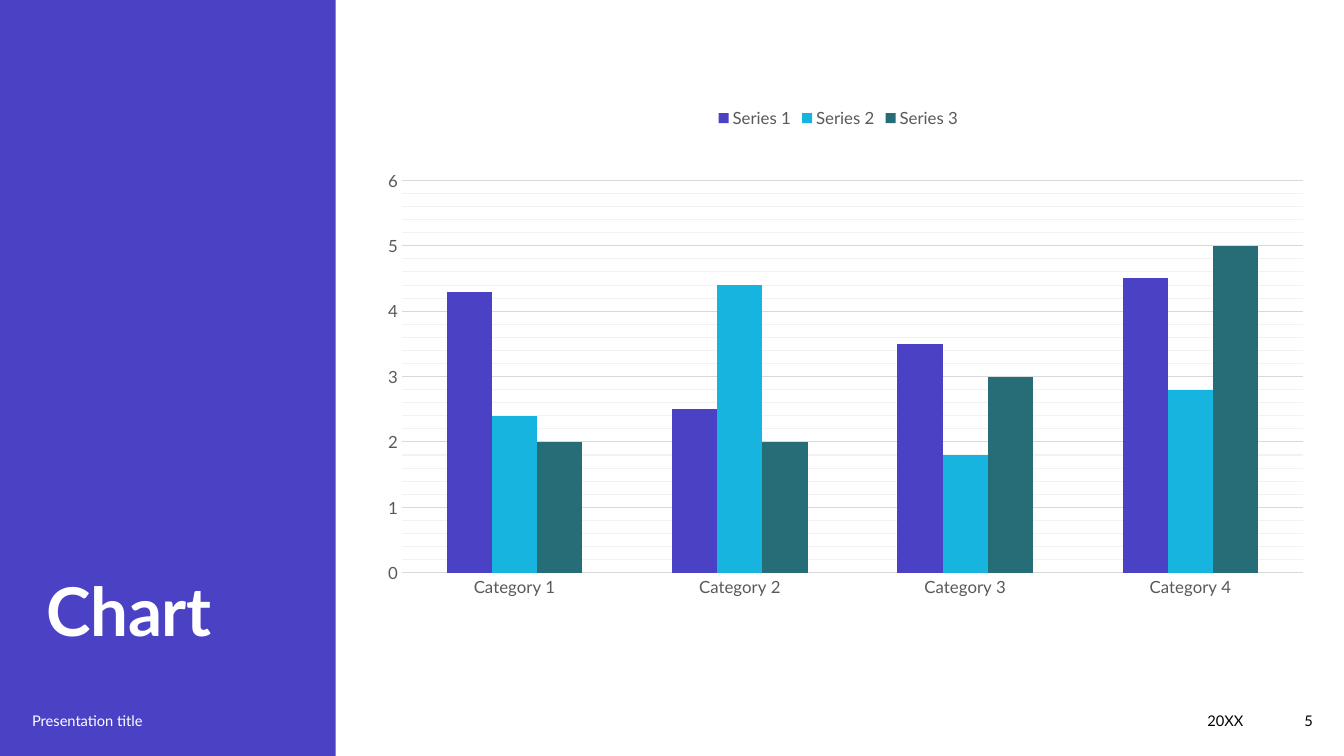
from copy import deepcopy
from lxml.etree import SubElement
from pptx import Presentation
from pptx.chart.data import CategoryChartData
from pptx.dml.color import RGBColor
from pptx.enum.chart import XL_CHART_TYPE as ChartType, XL_LEGEND_POSITION as LegendPosition
from pptx.enum.chart import XL_TICK_MARK as TickMark
from pptx.enum.shapes import MSO_SHAPE as Shape
from pptx.enum.text import MSO_ANCHOR as Anchor, MSO_AUTO_SIZE as AutoSize, PP_ALIGN as Align
from pptx.oxml.ns import qn
from pptx.util import Emu, Pt

EMU_PER_PX = 9144
TITLE_ONLY = 5
CATEGORIES = ["Category 1", "Category 2", "Category 3", "Category 4"]
SERIES = [
    ("Series 1", "4A41C5", (4.3, 2.5, 3.5, 4.5)),
    ("Series 2", "17B4DF", (2.4, 4.4, 1.8, 2.8)),
    ("Series 3", "276D77", (2, 2, 3, 5)),
]
PLOT_AREA = {"x": 0.04, "y": 0.16, "w": 0.95, "h": 0.75}


def px(*lengths):
    return [Emu(length * EMU_PER_PX) for length in lengths]


def rgb(value):
    return RGBColor.from_string(value)


class SlideBuilder:
    """Holds the style and the current slide, and adds each kind of element."""

    font_name = "Lato"
    accent, white, black = "4A41C5", "FFFFFF", "000000"
    label, grid, minor_grid = "595959", "D9D9D9", "F2F2F2"

    def __init__(self, slide):
        self.slide = slide
        self.shapes = slide.shapes

    def style_font(self, font, size, color, bold=False):
        font.name = self.font_name
        font.size = Pt(size)
        font.bold = bold
        font.color.rgb = rgb(color)

    def style_line(self, line, color):
        line.color.rgb = rgb(color)
        line.width = Pt(0.75)

    def fill_text(self, shape, text, size, color, anchor, align=Align.LEFT, bold=False):
        frame = shape.text_frame
        frame.text = text
        frame.word_wrap = True
        frame.auto_size = AutoSize.NONE
        frame.vertical_anchor = anchor
        paragraph = frame.paragraphs[0]
        paragraph.alignment = align
        self.style_font(paragraph.font, size, color, bold)

    def title(self, text, *box):
        title = self.shapes.title
        title.left, title.top, title.width, title.height = px(*box)
        self.fill_text(title, text, 48, self.white, Anchor.BOTTOM, bold=True)
        for properties in title.element.iter(qn("a:defRPr")):
            properties.set("spc", "-20")

    def side_panel(self, *box):
        panel = self.shapes.add_shape(Shape.RECTANGLE, *px(*box))
        panel.shadow.inherit = False
        panel.fill.solid()
        panel.fill.fore_color.rgb = rgb(self.accent)
        panel.line.fill.background()
        self.shapes.title.element.addprevious(panel.element)

    def footer(self, text, color, align, left, width):
        box = self.shapes.add_textbox(*px(left, 695, width, 40))
        self.fill_text(box, text, 10.5, color, Anchor.MIDDLE, align)

    def column_chart(self, categories, series_rows, *box):
        data = CategoryChartData()
        data.categories = categories
        for name, _, values in series_rows:
            data.add_series(name, values)
        chart = self.shapes.add_chart(ChartType.COLUMN_CLUSTERED, *px(*box), data).chart
        self.style_font(chart.font, 10, self.black)
        chart.has_title = False
        chart.has_legend = True
        chart.legend.position = LegendPosition.TOP
        chart.legend.include_in_layout = False
        self.style_font(chart.legend.font, 12, self.label)

        plot = chart.plots[0]
        plot.vary_by_categories = False
        plot.gap_width = 199
        plot.overlap = 0
        for series, (_, color, _) in zip(plot.series, series_rows):
            series.format.fill.solid()
            series.format.fill.fore_color.rgb = rgb(color)
        self.style_axes(chart.category_axis, chart.value_axis)
        self.style_minor_gridlines(chart)
        self.place_plot(chart)

    def style_axes(self, category_axis, value_axis):
        for axis in (category_axis, value_axis):
            axis.major_tick_mark = axis.minor_tick_mark = TickMark.NONE
            self.style_font(axis.tick_labels.font, 12, self.label)
        self.style_line(category_axis.format.line, self.grid)
        value_axis.format.line.fill.background()
        value_axis.minimum_scale, value_axis.maximum_scale = 0, 6
        value_axis.major_unit, value_axis.minor_unit = 1, 0.2
        value_axis.has_major_gridlines = value_axis.has_minor_gridlines = True
        self.style_line(value_axis.major_gridlines.format.line, self.grid)

    def style_minor_gridlines(self, chart):
        major = chart.element.find(".//" + qn("c:majorGridlines"))
        minor = chart.element.find(".//" + qn("c:minorGridlines"))
        properties = deepcopy(major.find(qn("c:spPr")))
        properties.find(".//" + qn("a:srgbClr")).set("val", self.minor_grid)
        minor.append(properties)

    def place_plot(self, chart):
        plot_area = chart.element.find(".//" + qn("c:plotArea"))
        for old_layout in plot_area.findall(qn("c:layout")):
            plot_area.remove(old_layout)
        layout = SubElement(plot_area, qn("c:layout"))
        plot_area.insert(0, layout)
        manual = SubElement(layout, qn("c:manualLayout"))
        settings = {"layoutTarget": "inner", "xMode": "edge", "yMode": "edge", **PLOT_AREA}
        for name, value in settings.items():
            SubElement(manual, qn(f"c:{name}")).set("val", str(value))


def main():
    presentation = Presentation()
    presentation.slide_width, presentation.slide_height = px(1333, 750)
    layout = presentation.slide_layouts[TITLE_ONLY]
    builder = SlideBuilder(presentation.slides.add_slide(layout))
    builder.side_panel(0, 0, 333, 750)
    builder.title("Chart", 36, 96, 261, 554)
    builder.footer("Presentation title", builder.white, Align.LEFT, 22, 303)
    builder.column_chart(CATEGORIES, SERIES, 361, 96, 941, 519)
    builder.footer("20XX", builder.black, Align.RIGHT, 767, 476)
    builder.footer("5", builder.black, Align.RIGHT, 1243, 69)
    presentation.save("out.pptx")


if __name__ == "__main__":
    main()
